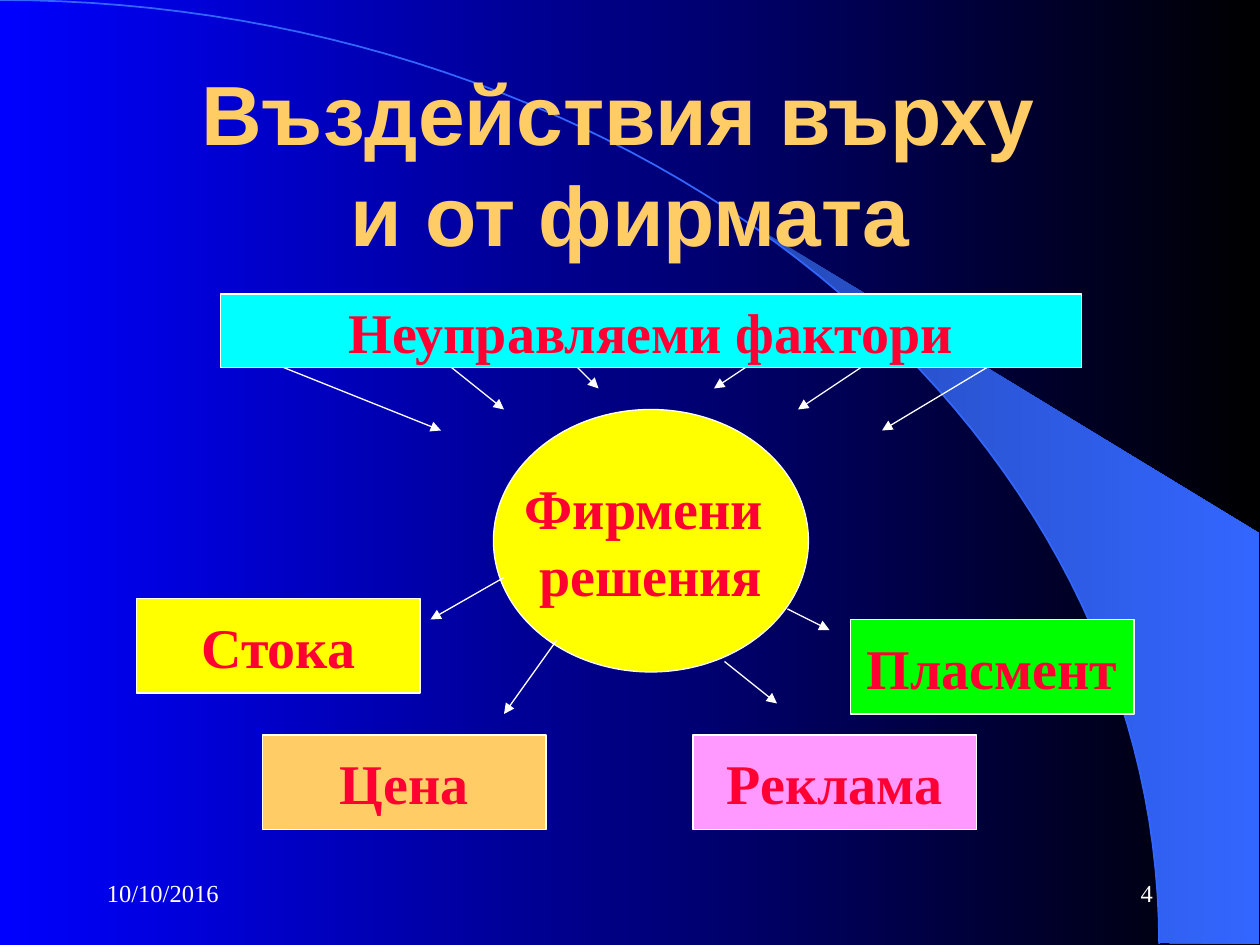
from math import cos, pi, sin

from pptx import Presentation
from pptx.dml.color import RGBColor
from pptx.enum.shapes import MSO_CONNECTOR as CONNECTOR, MSO_SHAPE as SHAPE
from pptx.enum.text import MSO_ANCHOR as ANCHOR, MSO_AUTO_SIZE as AUTO_SIZE, PP_ALIGN as ALIGN
from pptx.oxml.ns import qn
from pptx.util import Pt
from lxml.etree import SubElement

# Content: positions and sizes in points
TITLE = ["Въздействия върху ", "и от фирмата"]
TITLE_BOX = (54, 48, 612, 90)
BOX_SIZE = (162, 54)
NODES = [
    (["Неуправляеми фактори"], SHAPE.RECTANGLE, "cyan", (126, 168, 492, 42)),
    (["Фирмени ", "решения"], SHAPE.OVAL, "yellow", (282, 234, 180, 150)),
    (["Стока"], SHAPE.RECTANGLE, "yellow", (78, 342, *BOX_SIZE)),
    (["Цена"], SHAPE.RECTANGLE, "gold", (150, 420, *BOX_SIZE)),
    (["Пласмент"], SHAPE.RECTANGLE, "green", (486, 354, *BOX_SIZE)),
    (["Реклама"], SHAPE.RECTANGLE, "pink", (396, 420, *BOX_SIZE)),
]
FACTORS_BOTTOM = 210
FACTOR_ARROWS = [  # start x, end x, end y
    (162, 252, 246), (258, 288, 234), (330, 342, 222),
    (426, 408, 222), (492, 456, 234), (564, 504, 246),
]
DECISION_ARROWS = [
    (288, 330, 246, 354), (318, 366, 288, 408),
    (414, 378, 444, 402), (450, 348, 474, 360),
]
FOOTERS = [("10/10/2016", 54, ALIGN.LEFT), ("4", 516, ALIGN.RIGHT)]
FOOTER_TOP, FOOTER_SIZE = 492, (150, 36)
ARC_RADII = (662.4, 539.3)
ARC_STEPS = 60
BEAM_START, BEAM_END = 0.696, 1.57  # angles along the arc
BEAM_EDGE = [(719.3, 539.3), (719.3, 304.6)]

THEME = {
    "blue": "0000FF", "black": "000000", "white": "FFFFFF", "red": "FF0033",
    "gold": "FFCC66", "cyan": "00FFFF", "yellow": "FFFF00", "green": "00FF00",
    "pink": "FF99FF", "arc": "3366FF", "beam": "2449B6",
    "title": {"name": "Arial", "size": Pt(48), "bold": True},
    "node": {"name": "Times New Roman", "size": Pt(32), "bold": True},
    "footer": {"name": "Times New Roman", "size": Pt(14), "bold": False},
}


def color(name):
    return RGBColor.from_string(THEME[name])


def points(values):
    return [Pt(value) for value in values]


def set_gradient(fill, start, end):
    fill.gradient()
    fill.gradient_angle = 0
    for stop, name, position in zip(fill.gradient_stops, (start, end), (0, 1)):
        stop.color.rgb = color(name)
        stop.position = position


def set_line(line, name, width):
    line.color.rgb = color(name)
    line.width = Pt(width)


def style_paragraph(paragraph, style, color_name, align):
    paragraph.alignment = align
    for run in paragraph.runs:
        for key, value in THEME[style].items():
            setattr(run.font, key, value)
        run.font.color.rgb = color(color_name)


def write(shape, text, style, color_name, align, wrap=True):
    frame = shape.text_frame
    frame.text = text
    for key, value in {"word_wrap": wrap, "auto_size": AUTO_SIZE.NONE,
                       "vertical_anchor": ANCHOR.MIDDLE}.items():
        setattr(frame, key, value)
    for paragraph in frame.paragraphs:
        style_paragraph(paragraph, style, color_name, align)


def arc_points(start, end):
    """Points on the quarter ellipse, from its top (0) to its right end (pi / 2)."""
    width, height = ARC_RADII
    angles = [start + (end - start) * step / ARC_STEPS for step in range(ARC_STEPS + 1)]
    return [points((width * sin(a), height * (1 - cos(a)))) for a in angles]


def add_outline(slide, vertices, close):
    builder = slide.shapes.build_freeform(*vertices[0])
    builder.add_line_segments(vertices[1:], close=close)
    shape = builder.convert_to_shape()
    shape.shadow.inherit = False
    return shape


def add_arrow(slide, start_x, start_y, end_x, end_y):
    arrow = slide.shapes.add_connector(
        CONNECTOR.STRAIGHT, *points((start_x, start_y, end_x, end_y)))
    set_line(arrow.line, "white", 0.75)
    SubElement(arrow.line._get_or_add_ln(), qn("a:tailEnd"), type="triangle")
    SubElement(arrow._element.spPr, qn("a:effectLst"))


def main():
    presentation = Presentation()
    presentation.slide_width, presentation.slide_height = Pt(720), Pt(540)
    slide = presentation.slides.add_slide(presentation.slide_layouts[5])
    shapes = slide.shapes

    # Background with beam and arc
    set_gradient(slide.background.fill, "blue", "black")
    beam_edge = [points(corner) for corner in BEAM_EDGE]
    beam = add_outline(slide, arc_points(BEAM_START, BEAM_END) + beam_edge, close=True)
    set_gradient(beam.fill, "beam", "arc")
    beam.line.fill.background()
    arc = add_outline(slide, arc_points(0, pi / 2), close=False)
    arc.fill.background()
    set_line(arc.line, "arc", 1)

    # Date and slide number
    for text, left, align in FOOTERS:
        box = shapes.add_textbox(*points((left, FOOTER_TOP, *FOOTER_SIZE)))
        write(box, text, "footer", "white", align)

    # Title, brought in front of the background
    title = shapes.title
    title.left, title.top, title.width, title.height = points(TITLE_BOX)
    write(title, "\v".join(TITLE), "title", "gold", ALIGN.CENTER)
    beam._element.getparent().append(title._element)

    # Boxes and ellipse
    for lines, kind, fill, place in NODES:
        node = shapes.add_shape(kind, *points(place))
        node.shadow.inherit = False
        node.fill.solid()
        node.fill.fore_color.rgb = color(fill)
        set_line(node.line, "white", 0.75)
        write(node, "\n".join(lines), "node", "red", ALIGN.CENTER, wrap=False)

    # Arrows from the factors and from the decisions
    for start_x, end_x, end_y in FACTOR_ARROWS:
        add_arrow(slide, start_x, FACTORS_BOTTOM, end_x, end_y)
    for ends in DECISION_ARROWS:
        add_arrow(slide, *ends)

    presentation.save("out.pptx")


if __name__ == "__main__":
    main()
